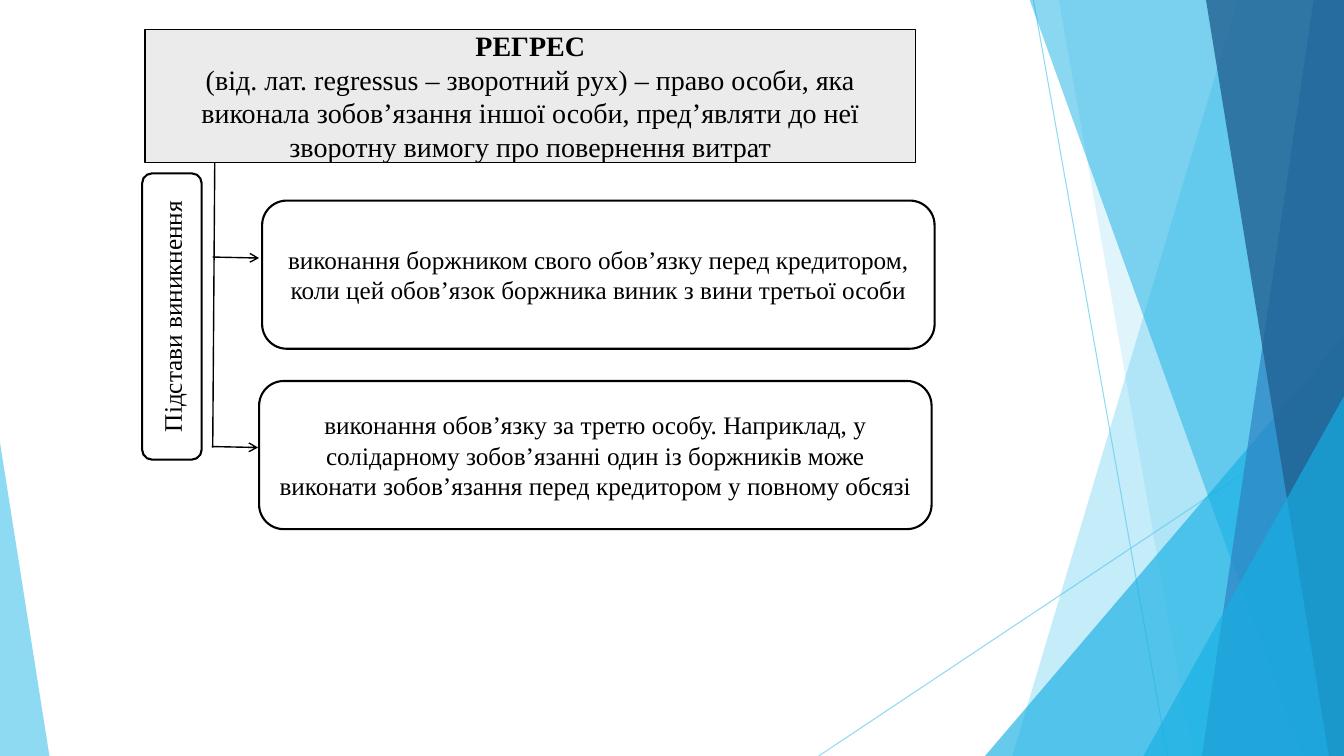
import pptx
import pptx.util
import pptx.dml.color
import pptx.enum.dml
import pptx.enum.shapes
import pptx.enum.text
import pptx.oxml.ns
from lxml import etree

COLS, ROWS = 133.3, 75
COLORS = {
    "ink": "000000", "paper": "FFFFFF", "header": "EBEBEB",
    "sky": "5FCBEF", "azure": "17B0E4", "blue": "2E83C3", "navy": "226292",
}
SHAPES = pptx.enum.shapes.MSO_SHAPE
qn = pptx.oxml.ns.qn


class RegressSlide:
    """Draw slide elements on a grid of tenth-inch columns and rows."""

    font = "Times New Roman"

    def __init__(self, deck):
        self.slide = deck.slides.add_slide(deck.slide_layouts[6])

    def cells(self, *counts):
        return [pptx.util.Inches(count / 10) for count in counts]

    def color(self, name):
        return pptx.dml.color.RGBColor.from_string(COLORS[name])

    def fade(self, item, opacity):
        for tint in item.element.spPr.iter(qn("a:srgbClr")):
            etree.SubElement(tint, qn("a:alpha"), val=str(opacity * 1000))

    def fill(self, item, name, opacity=100):
        item.shadow.inherit = False
        item.fill.solid()
        item.fill.fore_color.rgb = self.color(name)
        item.line.fill.background()
        if opacity < 100:
            self.fade(item, opacity)

    def panel(self, top_left, bottom_left, name, opacity, top_right=COLS):
        corners = [(top_right, -0.1), (COLS, ROWS), (bottom_left, ROWS)]
        if top_right != COLS:
            corners.insert(1, (COLS, -0.1))
        outline = self.slide.shapes.build_freeform(*self.cells(top_left, -0.1))
        outline.add_line_segments([self.cells(*corner) for corner in corners], close=True)
        self.fill(outline.convert_to_shape(), name, opacity)

    def triangle(self, left, top, width, apex, name, opacity):
        corner = self.slide.shapes.add_shape(
            SHAPES.ISOSCELES_TRIANGLE, *self.cells(left, top, width, ROWS - top))
        corner.adjustments[0] = apex
        self.fill(corner, name, opacity)

    def line(self, start, end, name="ink", weight=1, opacity=100, arrow=False):
        stroke = self.slide.shapes.add_connector(
            pptx.enum.shapes.MSO_CONNECTOR.STRAIGHT, *self.cells(*start, *end))
        stroke.line.width = pptx.util.Pt(weight)
        stroke.line.color.rgb = self.color(name)
        if opacity < 100:
            self.fade(stroke, opacity)
        if arrow:
            etree.SubElement(stroke.element.spPr.find(qn("a:ln")), qn("a:tailEnd"), type="arrow")
        etree.SubElement(stroke.element.spPr, qn("a:effectLst"))

    def box(self, place, text, size=18, kind=SHAPES.ROUNDED_RECTANGLE,
            name="paper", weight=1.5, bold_first=False, upright=False):
        card = self.slide.shapes.add_shape(kind, *self.cells(*place))
        self.fill(card, name)
        card.line.color.rgb = self.color("ink")
        card.line.width = pptx.util.Pt(weight)
        frame = card.text_frame
        frame.word_wrap = True
        frame.vertical_anchor = pptx.enum.text.MSO_ANCHOR.MIDDLE
        frame.text = text
        if upright:
            card.element.txBody.bodyPr.set("vert", "vert270")
        for index, paragraph in enumerate(frame.paragraphs):
            paragraph.alignment = pptx.enum.text.PP_ALIGN.CENTER
            for run in paragraph.runs:
                run.font.name = self.font
                run.font.size = pptx.util.Pt(size)
                run.font.bold = bold_first and index == 0
                run.font.color.rgb = self.color("ink")


def main():
    deck = pptx.Presentation()
    deck.slide_width = pptx.util.Inches(COLS / 10)
    deck.slide_height = pptx.util.Inches(ROWS / 10)
    page = RegressSlide(deck)

    page.line((102.5, 0), (115.8, ROWS), "sky", 0.75, 70)
    page.line((COLS, 40.3), (81.2, ROWS), "sky", 0.75, 70)
    page.panel(122.8, 100.4, "sky", 36)
    page.panel(105, 118.3, "sky", 20)
    page.triangle(97.7, 33.3, 35.6, 1, "azure", 66)
    page.panel(102.1, 129.1, "azure", 50)
    page.panel(130.3, 119.2, "blue", 70)
    page.panel(119.6, 131.8, "navy", 80)
    page.triangle(113.4, 39.3, 19.9, 1, "azure", 66)
    page.triangle(0, 43.9, 4.9, 0, "sky", 70)

    page.box((14.4, 2.9, 76.4, 13.2),
             "РЕГРЕС\n(від. лат. regressus – зворотний рух) – право особи, яка виконала "
             "зобов’язання іншої особи, пред’являти до неї зворотну вимогу про повернення витрат",
             20, SHAPES.RECTANGLE, "header", 1, bold_first=True)
    page.line((21.3, 16.1), (21.1, 44.4))

    grounds = [
        (26, 19.9, 21.1, 25.5,
         "виконання боржником свого обов’язку перед кредитором, "
         "коли цей обов’язок боржника виник з вини третьої особи"),
        (25.7, 37.8, 21, 44.3,
         "виконання обов’язку за третю особу. Наприклад, у солідарному зобов’язанні "
         "один із боржників може виконати зобов’язання перед кредитором у повному обсязі"),
    ]
    for left, top, branch_left, branch_top, ground in grounds:
        page.line((branch_left, branch_top), (branch_left + 4.6, branch_top + 0.1), arrow=True)
        page.box((left, top, 66.7, 14.7), ground)
    page.box((14.1, 17.2, 5.9, 28.4), "Підстави виникнення", upright=True)

    deck.save("out.pptx")


if __name__ == "__main__":
    main()
